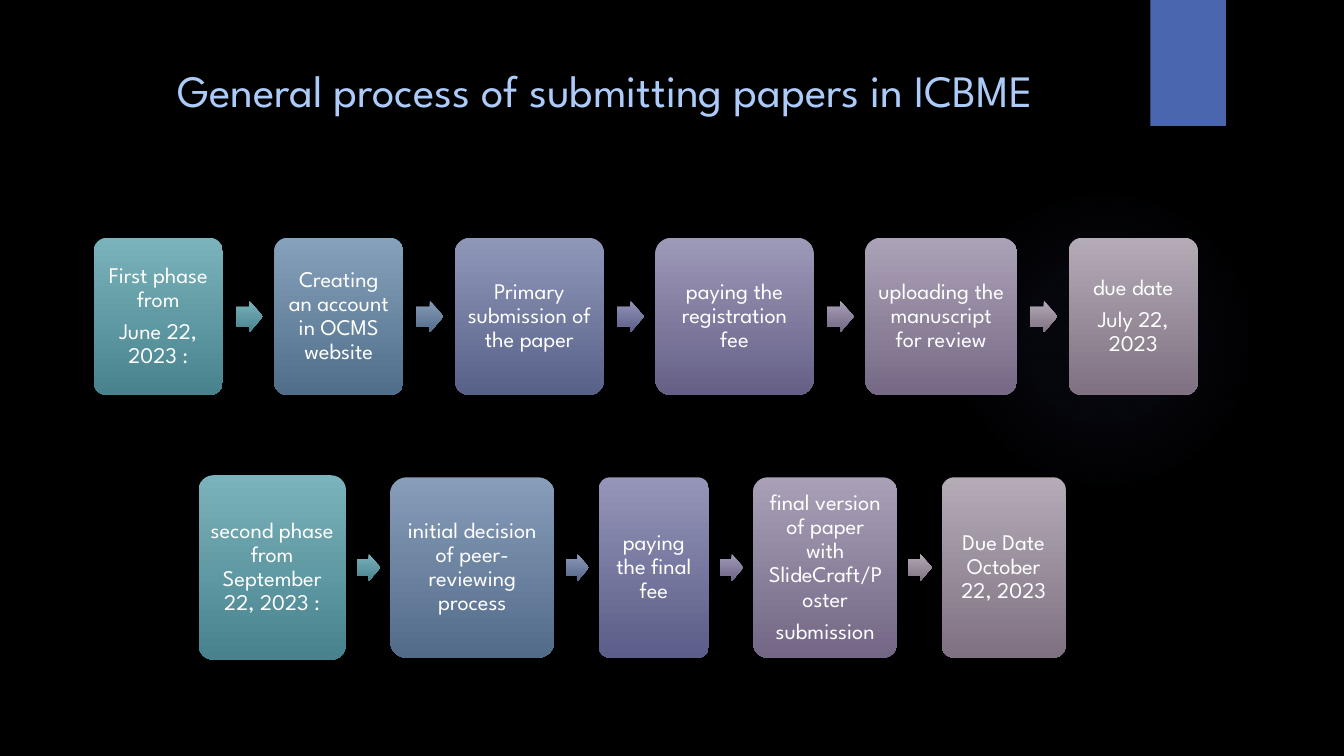
from lxml import etree
from pptx import Presentation
from pptx.dml.color import RGBColor
from pptx.enum.shapes import MSO_SHAPE
from pptx.enum.text import MSO_ANCHOR, PP_ALIGN
from pptx.oxml.ns import qn
from pptx.util import Inches, Pt

FONT = "League Spartan"
BLACK = RGBColor(0x00, 0x00, 0x00)
WHITE = RGBColor(0xFF, 0xFF, 0xFF)
SKY = RGBColor(0xAC, 0xCB, 0xF9)
BLUE = RGBColor(0x4A, 0x66, 0xAC)
GLOW = RGBColor(0x5C, 0x64, 0xB7)

# Gradients as (top, bottom)
TEAL = RGBColor(0x7B, 0xB3, 0xBD), RGBColor(0x48, 0x82, 0x8C)
STEEL = RGBColor(0x85, 0xA1, 0xBB), RGBColor(0x50, 0x6E, 0x8A)
DENIM = RGBColor(0x88, 0x9D, 0xBA), RGBColor(0x52, 0x6B, 0x89)
SLATE = RGBColor(0x8C, 0x99, 0xB9), RGBColor(0x56, 0x65, 0x89)
INDIGO = RGBColor(0x8F, 0x97, 0xB9), RGBColor(0x58, 0x61, 0x88)
VIOLET = RGBColor(0x94, 0x95, 0xB8), RGBColor(0x5C, 0x5D, 0x88)
LAVENDER = RGBColor(0x9D, 0x99, 0xB8), RGBColor(0x66, 0x60, 0x87)
PLUM = RGBColor(0xA3, 0x9C, 0xB7), RGBColor(0x6C, 0x63, 0x86)
MAUVE = RGBColor(0xA9, 0xA0, 0xB7), RGBColor(0x73, 0x67, 0x85)
ORCHID = RGBColor(0xAC, 0xA2, 0xB7), RGBColor(0x76, 0x69, 0x85)
ASH = RGBColor(0xB4, 0xAB, 0xB7), RGBColor(0x7F, 0x71, 0x82)

# Steps as (paragraphs, width, height, box gradient, gradient of the arrow after it)
FIRST_PHASE = [
    (["First phase from", "June 22, 2023 :"], 1.28, 1.56, TEAL, TEAL),
    (["Creating an account in OCMS website"], 1.28, 1.56, STEEL, DENIM),
    (["Primary submission of the paper"], 1.48, 1.56, INDIGO, VIOLET),
    (["paying the registration fee"], 1.57, 1.56, LAVENDER, MAUVE),
    (["uploading the manuscript for review"], 1.51, 1.56, ORCHID, ASH),
    (["due date", "July 22, 2023"], 1.28, 1.56, ASH, None),
]
SECOND_PHASE = [
    (["second phase from September 22, 2023 :"], 1.46, 1.83, TEAL, TEAL),
    (["initial decision of peer-reviewing process"], 1.63, 1.79, DENIM, SLATE),
    (["paying the final fee"], 1.09, 1.79, VIOLET, PLUM),
    (["final version of paper with SlideCraft/Poster", "submission"],
     1.43, 1.79, MAUVE, ASH),
    (["Due Date\nOctober 22, 2023"], 1.23, 1.79, ASH, None),
]


def add_plain_shape(page, kind, left, top, width, height):
    """Add a preset shape without line or shadow."""
    shape = page.shapes.add_shape(
        kind, Inches(left), Inches(top), Inches(width), Inches(height))
    shape.shadow.inherit = False
    shape.line.fill.background()
    return shape


def fill_downwards(shape, colours):
    shape.fill.gradient()
    shape.fill.gradient_angle = 270
    for stop, colour in zip(shape.fill.gradient_stops, colours):
        stop.color.rgb = colour


def add_glow(page):
    """Add the faint round light, fading out from its centre."""
    glow = add_plain_shape(page, MSO_SHAPE.OVAL, 9.41, 1.83, 3.08, 3.08)
    glow.fill.gradient()
    gradient = glow.fill._xPr.find(qn("a:gradFill"))
    for child in list(gradient):
        gradient.remove(child)
    stops = etree.SubElement(gradient, qn("a:gsLst"))
    for position, opacity in ((0, 7), (36, 6), (69, 0)):
        stop = etree.SubElement(stops, qn("a:gs"), pos=str(position * 1000))
        colour = etree.SubElement(stop, qn("a:srgbClr"), val=str(GLOW))
        etree.SubElement(colour, qn("a:alpha"), val=str(opacity * 1000))
    circle = etree.SubElement(gradient, qn("a:path"), path="circle")
    etree.SubElement(circle, qn("a:fillToRect"),
                     {side: "50000" for side in "ltrb"})


def add_span(para, words, size, colour):
    span = para.add_run()
    span.text = words
    span.font.name = FONT
    span.font.size = Pt(size)
    span.font.color.rgb = colour


def set_title(page, words):
    title = page.shapes.title
    title.left, title.top = Inches(1.26), Inches(0.55)
    title.width, title.height = Inches(9.65), Inches(1.2)
    frame = title.text_frame
    frame.vertical_anchor = MSO_ANCHOR.TOP
    frame.margin_top = Inches(0.07)
    frame.margin_right = Inches(0.26)
    para = frame.paragraphs[0]
    para.alignment = PP_ALIGN.CENTER
    add_span(para, words, 32, SKY)


def add_step(page, left, middle, width, height, colours, paragraphs):
    box = add_plain_shape(page, MSO_SHAPE.ROUNDED_RECTANGLE,
                          left, middle - height / 2, width, height)
    box.adjustments[0] = 0.1
    fill_downwards(box, colours)
    frame = box.text_frame
    frame.word_wrap = True
    frame.vertical_anchor = MSO_ANCHOR.MIDDLE
    frame.margin_left = frame.margin_right = Inches(0.07)
    frame.margin_top = frame.margin_bottom = Inches(0.07)
    for index, words in enumerate(paragraphs):
        para = frame.add_paragraph() if index else frame.paragraphs[0]
        para.alignment = PP_ALIGN.CENTER
        para.line_spacing = 0.9
        para.space_before = Pt(5.6 if index else 0)
        for number, line in enumerate(words.split("\n")):
            if number:
                para.add_line_break()
            add_span(para, line, 16, WHITE)


def add_arrow(page, left, middle, gap, colours):
    """Add an arrow sized to the gap that starts at left."""
    height = gap * 0.62
    arrow = add_plain_shape(page, MSO_SHAPE.RIGHT_ARROW, left + gap / 4,
                            middle - height / 2, gap * 0.53, height)
    arrow.adjustments[0] = 0.6
    arrow.adjustments[1] = 0.5
    fill_downwards(arrow, colours)


def add_process(page, steps, left, middle, gap):
    for paragraphs, width, height, box_colours, arrow_colours in steps:
        add_step(page, left, middle, width, height, box_colours, paragraphs)
        left += width
        if arrow_colours:
            add_arrow(page, left, middle, gap, arrow_colours)
        left += gap


def main():
    deck = Presentation()
    deck.slide_width, deck.slide_height = Inches(13.33), Inches(7.5)
    page = deck.slides.add_slide(deck.slide_layouts[5])
    page.background.fill.solid()
    page.background.fill.fore_color.rgb = BLACK
    add_glow(page)
    tab = add_plain_shape(page, MSO_SHAPE.RECTANGLE, 11.41, 0, 0.75, 1.25)
    tab.fill.solid()
    tab.fill.fore_color.rgb = BLUE
    set_title(page, "General process of submitting papers in ICBME")
    add_process(page, FIRST_PHASE, left=0.93, middle=3.14, gap=0.51)
    add_process(page, SECOND_PHASE, left=1.97, middle=5.63, gap=0.44)
    deck.save("out.pptx")


if __name__ == "__main__":
    main()
